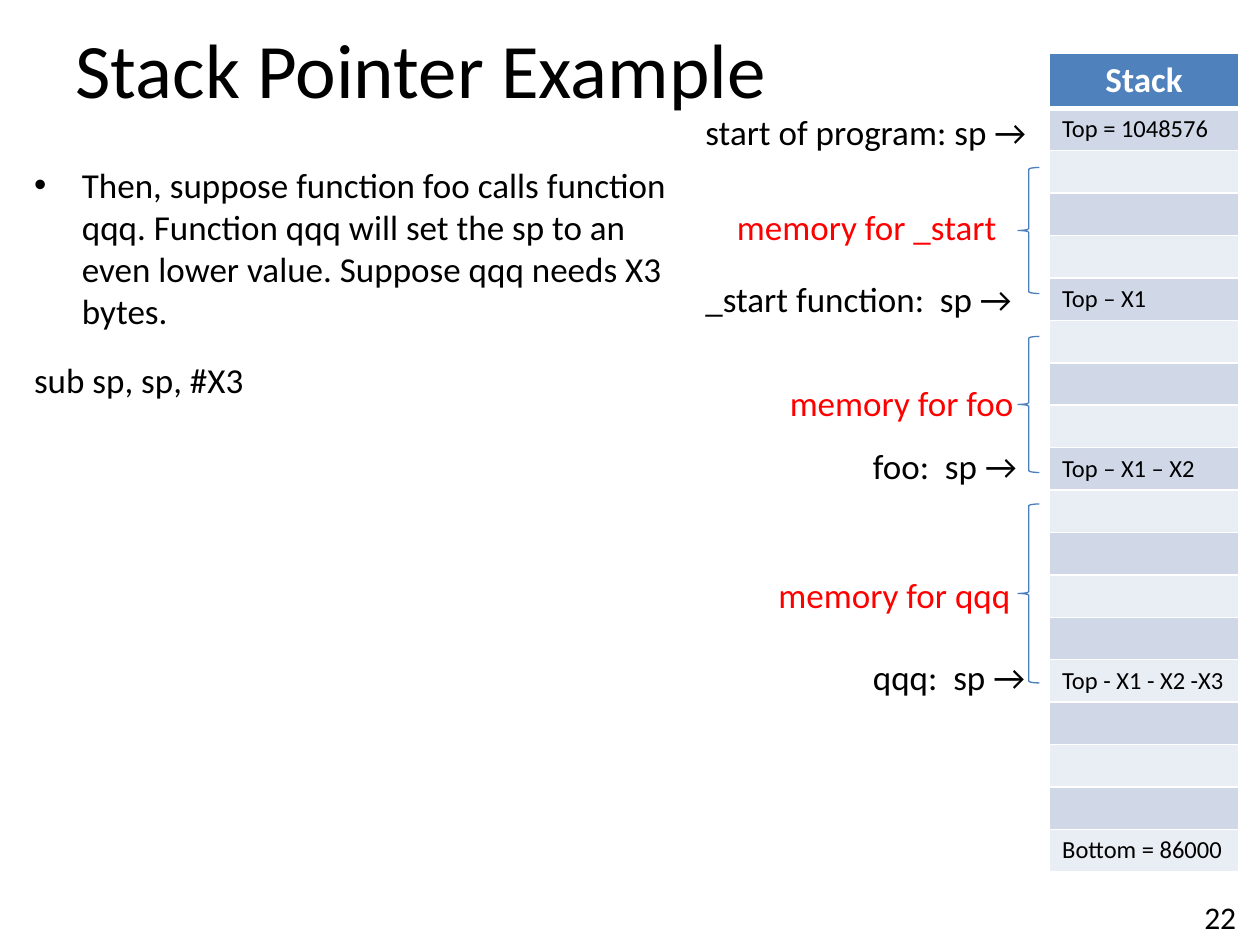
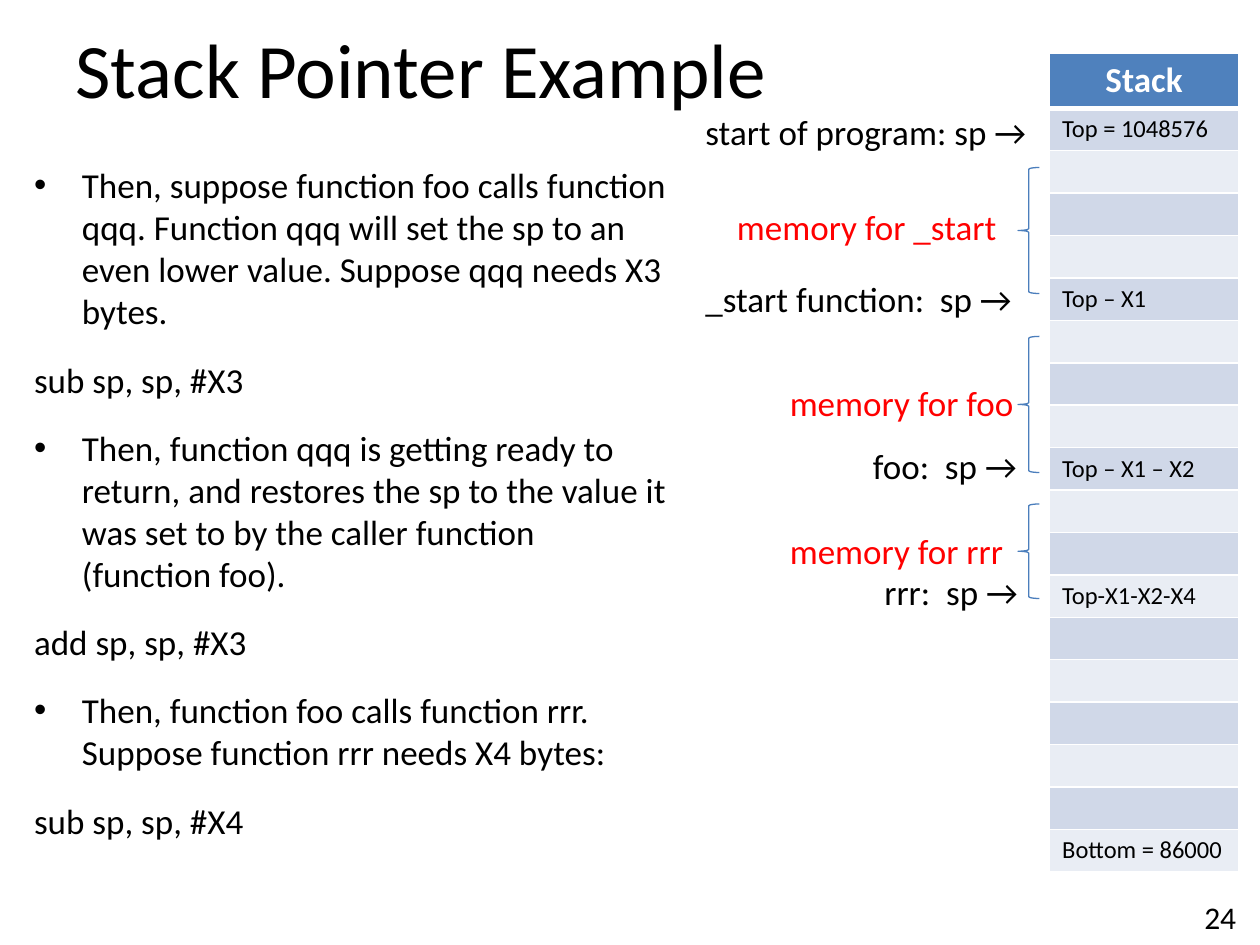
import pptx
import pptx.util
import pptx.dml.color
import pptx.enum.shapes
import pptx.enum.text
import pptx.oxml.ns
import lxml.etree

Inches, Pt = pptx.util.Inches, pptx.util.Pt
ALIGN = pptx.enum.text.PP_ALIGN
MIDDLE = pptx.enum.text.MSO_ANCHOR.MIDDLE

# Shared look
FONT = "Calibri"
BLACK, WHITE, RED = "000000", "FFFFFF", "FF0000"
HEAD, DARK, LIGHT, BRACE = "4F81BD", "D0D8E8", "E9EDF4", "4B7EBC"
ROWS, HEAD_H, TABLE_H = 18, 0.44, 6.5

# Wording: a list entry is a pair of bullet and code line
CALL = ("Then, suppose function foo calls function qqq. Function qqq will set "
        "the sp to an even lower value. Suppose qqq needs X3 bytes.",
        "sub sp, sp, #X3")
BACK = ("Then, function qqq is getting ready to return, and restores the sp to "
        "the value it was set to by the caller function (function foo).",
        "add sp, sp, #X3")
NEXT = ("Then, function foo calls function rrr. Suppose function rrr needs X4 bytes:",
        "sub sp, sp, #X4")

# Stack parts seen on both slides
CELLS = {1: "Top = 1048576", 5: "Top – X1", 9: "Top – X1 – X2", ROWS: "Bottom = 86000"}
MARKS = [("start of program: sp →", 5.5, 0.83, 2.79),
         ("_start function:  sp →", 5.5, 2.15, 2.68),
         ("foo:  sp →", 6.83, 3.48, 1.37)]
FRAMES = [("memory for _start", 5.75, 1.58, 2.42, 1.33, 1),
          ("memory for foo", 6.17, 2.98, 2, 2.67, 1.08)]


def color(code):
    return pptx.dml.color.RGBColor.from_string(code)


def style(para, size, code=BLACK, bold=False):
    for run in para.runs:
        run.font.name, run.font.size, run.font.bold = FONT, Pt(size), bold
        run.font.color.rgb = color(code)


def place(shape, left, top, width, height):
    shape.left, shape.top = Inches(left), Inches(top)
    shape.width, shape.height = Inches(width), Inches(height)


def add_title(slide):
    title = slide.shapes.title
    place(title, 0.5, 0.08, 9, 0.92)
    frame = title.text_frame
    frame.text = "Stack Pointer Example"
    frame.vertical_anchor = MIDDLE
    frame.paragraphs[0].alignment = ALIGN.LEFT
    style(frame.paragraphs[0], 44)


def add_steps(slide, steps):
    body = slide.placeholders[1]
    place(body, 0.17, 1.25, 5.25, 5.33)
    frame = body.text_frame
    frame.auto_size = pptx.enum.text.MSO_AUTO_SIZE.NONE
    frame.text = "\n".join(line for step in steps for line in step)
    for i, para in enumerate(frame.paragraphs):
        para.space_before = Pt(15 if i else 0)
        style(para, 20)
        props = para._p.get_or_add_pPr()
        code = i % 2 == 1
        indent = 0 if code else Inches(0.38)
        props.set("marL", str(indent))
        props.set("indent", str(-indent))
        tag = "a:buNone" if code else "a:buChar"
        mark = lxml.etree.SubElement(props, pptx.oxml.ns.qn(tag))
        if not code:
            mark.set("char", "•")


def add_label(slide, text, left, top, width, code=BLACK, size=20, wrap=False,
              align=ALIGN.LEFT):
    box = slide.shapes.add_textbox(Inches(left), Inches(top), Inches(width), Inches(0.44))
    frame = box.text_frame
    frame.word_wrap = wrap
    frame.text = text
    frame.paragraphs[0].alignment = align
    style(frame.paragraphs[0], size, code)


def add_brace(slide, top, height):
    brace = slide.shapes.add_shape(pptx.enum.shapes.MSO_SHAPE.LEFT_BRACE, Inches(8.08),
                                   Inches(top), Inches(0.17), Inches(height))
    brace.shadow.inherit = False
    brace.fill.background()
    brace.line.color.rgb = color(BRACE)
    brace.line.width = Pt(0.75)


def edge(cell, below):
    # White borders go ahead of the cell's fill
    props = cell._tc.get_or_add_tcPr()
    for i, side in enumerate("LRTB"):
        width = below if side == "B" else 1
        line = lxml.etree.Element(pptx.oxml.ns.qn("a:ln" + side), w=str(Pt(width)))
        fill = lxml.etree.SubElement(line, pptx.oxml.ns.qn("a:solidFill"))
        lxml.etree.SubElement(fill, pptx.oxml.ns.qn("a:srgbClr"), val=WHITE)
        props.insert(i, line)


def add_stack(slide, texts):
    table = slide.shapes.add_table(ROWS + 1, 1, Inches(8.33), Inches(0.42),
                                   Inches(1.5), Inches(TABLE_H)).table
    for i, row in enumerate(table.rows):
        head = i == 0
        row.height = Inches(HEAD_H if head else (TABLE_H - HEAD_H) / ROWS)
        cell = row.cells[0]
        cell.margin_top = cell.margin_bottom = 0
        cell.vertical_anchor = MIDDLE
        cell.fill.solid()
        cell.fill.fore_color.rgb = color(HEAD if head else DARK if i % 2 else LIGHT)
        edge(cell, 3 if head else 1)
        cell.text = "Stack" if head else texts.get(i, "")
        para = cell.text_frame.paragraphs[0]
        if head:
            para.alignment = ALIGN.CENTER
            style(para, 20, WHITE, True)
        else:
            style(para, 14)


def add_page(deck, number, steps, cells, mark, frame):
    slide = deck.slides.add_slide(deck.slide_layouts[1])
    add_title(slide)
    add_label(slide, number, 7.58, 7.08, 2.33, size=18, wrap=True, align=ALIGN.RIGHT)
    add_steps(slide, steps)
    add_stack(slide, CELLS | cells)
    for item in MARKS + [mark]:
        add_label(slide, *item)
    for text, left, top, width, start, height in FRAMES + [frame]:
        add_brace(slide, start, height)
        add_label(slide, text, left, top, width, RED, wrap=True)


def main():
    deck = pptx.Presentation()
    deck.slide_width, deck.slide_height = Inches(10), Inches(7.5)
    # Call of qqq
    add_page(deck, "22", [CALL], {14: "Top - X1 - X2 -X3"},
             ("qqq:  sp →", 6.83, 5.15, 1.44),
             ("memory for qqq", 6.08, 4.5, 2.08, 4, 1.42))
    # Return from qqq, then call of rrr
    add_page(deck, "24", [CALL, BACK, NEXT], {12: "Top-X1-X2-X4"},
             ("rrr:  sp →", 6.92, 4.48, 1.29),
             ("memory for rrr", 6.17, 4.15, 2.08, 4, 0.75))
    deck.save("out.pptx")


if __name__ == "__main__":
    main()
